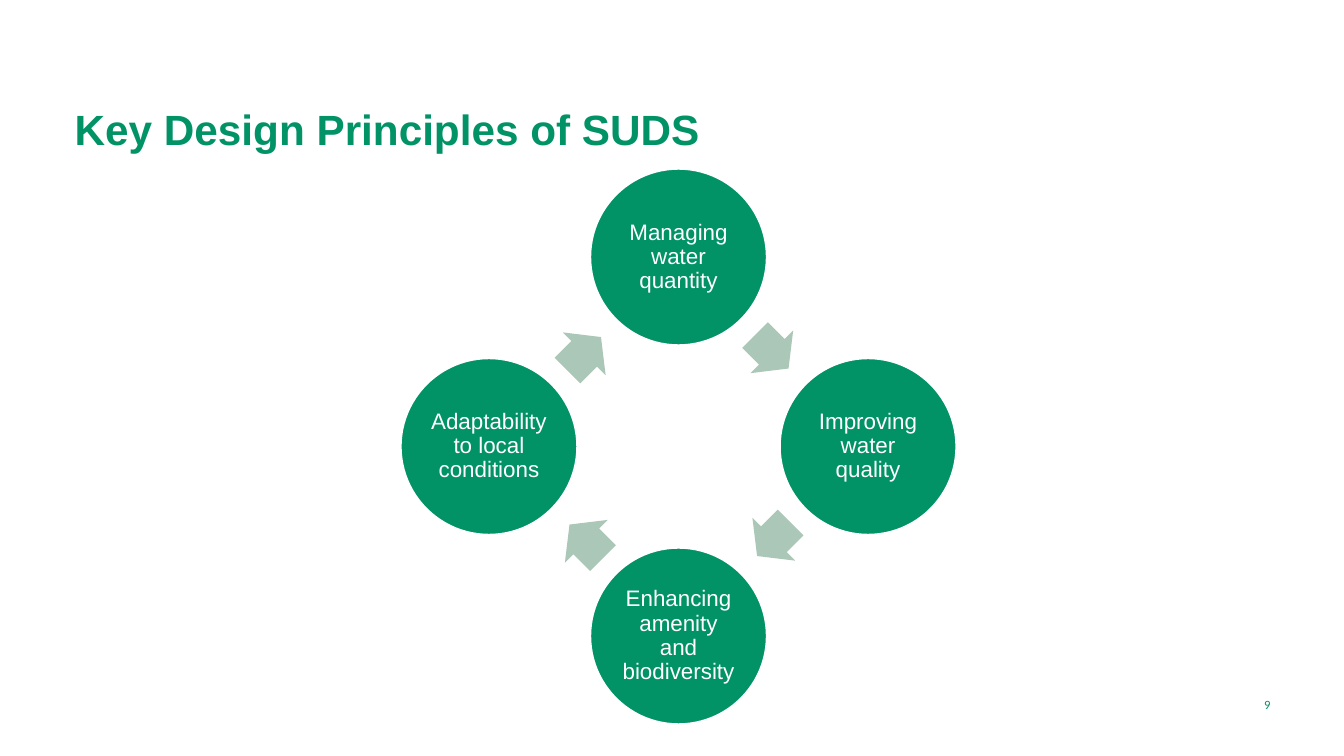
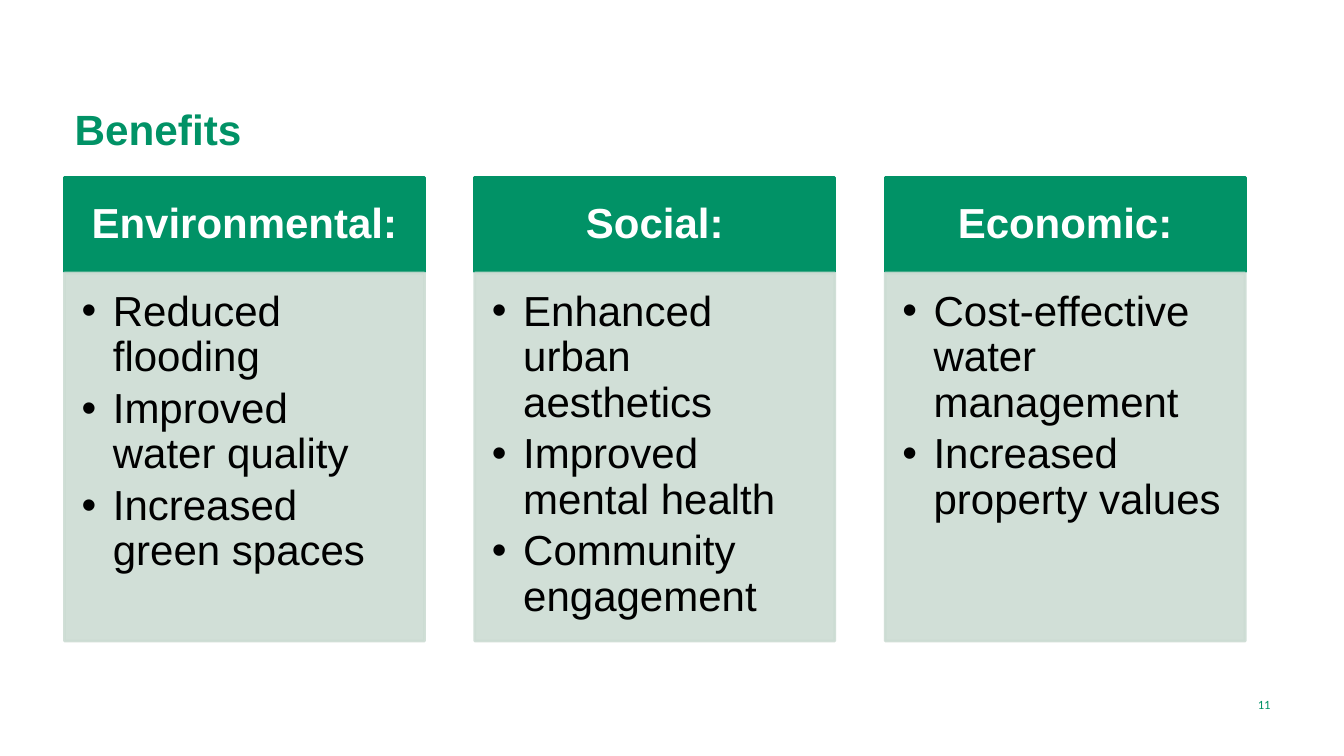
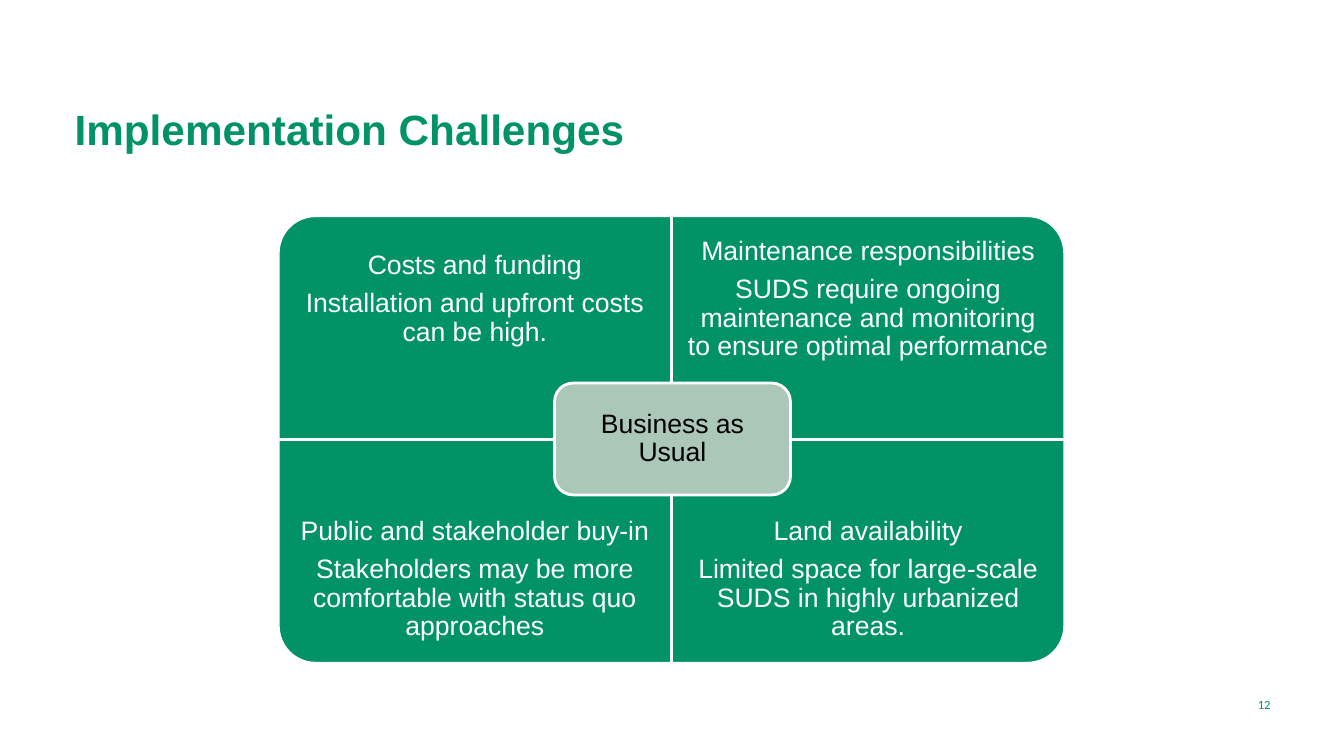
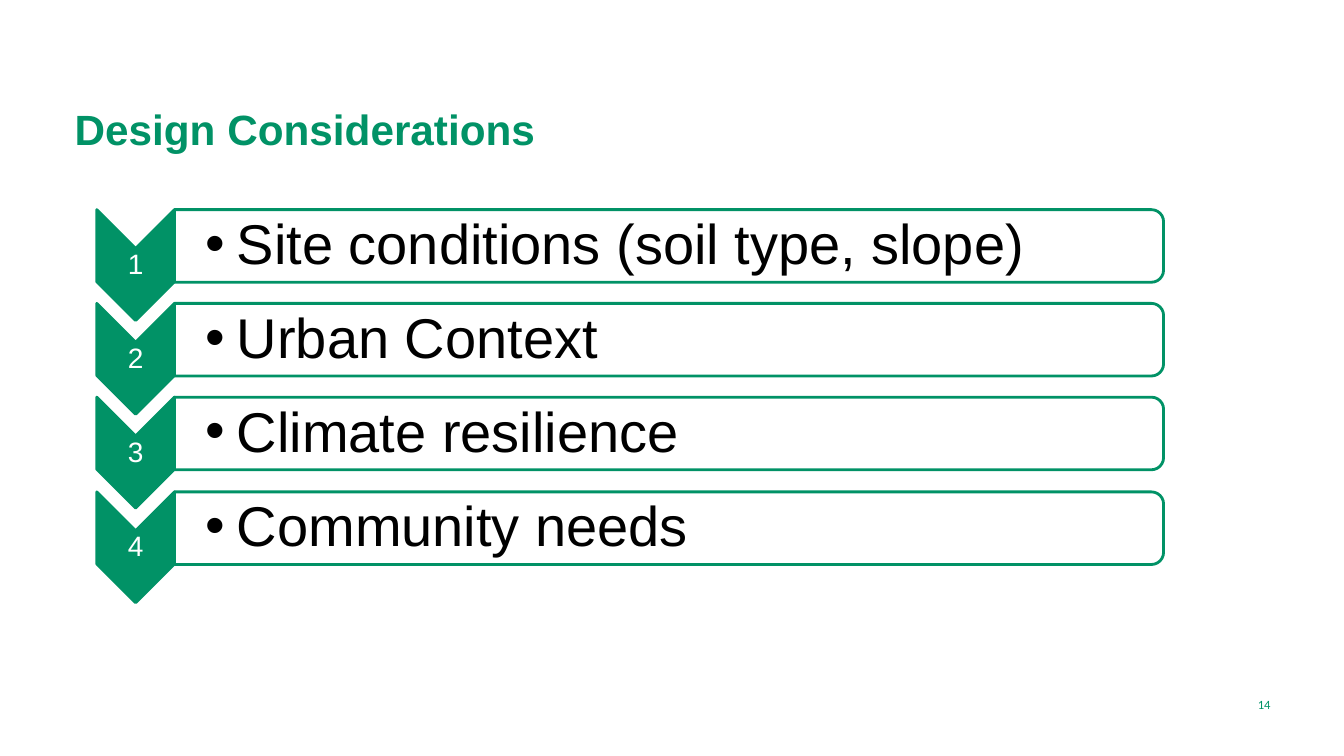
from dataclasses import dataclass
from typing import NamedTuple, Optional

from lxml.etree import SubElement
from pptx import Presentation
from pptx.dml.color import RGBColor
from pptx.enum.shapes import MSO_SHAPE
from pptx.enum.text import MSO_ANCHOR, MSO_AUTO_SIZE, PP_ALIGN
from pptx.oxml.ns import qn
from pptx.util import Emu, Pt

PX = 9144
GREEN = RGBColor(0x01, 0x92, 0x66)
SAGE = RGBColor(0xAB, 0xC7, 0xB8)
MIST = RGBColor(0xCC, 0xDC, 0xD3)
WHITE = RGBColor(0xFF, 0xFF, 0xFF)
BLACK = RGBColor(0x00, 0x00, 0x00)


class Box(NamedTuple):
    x: int
    y: int
    w: int
    h: int

    def emu(self) -> list[Emu]:
        return [px(v) for v in self]


@dataclass(frozen=True)
class TextStyle:
    size: float
    color: RGBColor
    insets: tuple[int, int, int, int]
    bold: bool = False
    font: str = "Arial"
    align: PP_ALIGN = PP_ALIGN.CENTER
    anchor: MSO_ANCHOR = MSO_ANCHOR.MIDDLE
    line_spacing: Optional[float] = 0.9
    after: float = 0.35
    bullet: bool = False


@dataclass(frozen=True)
class Benefit:
    heading: str
    points: list[str]


@dataclass(frozen=True)
class Challenge:
    column: int
    row: int
    rotation: int
    lines: list[str]


TITLE = TextStyle(30.2, GREEN, (10, 5, 10, 5), bold=True, align=PP_ALIGN.LEFT,
                  anchor=MSO_ANCHOR.BOTTOM, line_spacing=None, after=0)
PAGE_NUMBER = TextStyle(9, GREEN, (10, 5, 10, 5), font="Calibri",
                        align=PP_ALIGN.RIGHT, line_spacing=None, after=0)
PRINCIPLE = TextStyle(16, WHITE, (2, 2, 2, 2))
HEADING = TextStyle(30, WHITE, (23, 13, 23, 13), bold=True)
POINTS = TextStyle(30, BLACK, (17, 17, 23, 26), align=PP_ALIGN.LEFT,
                   anchor=MSO_ANCHOR.TOP, after=0.15, bullet=True)
CHALLENGE = TextStyle(19, WHITE, (15, 15, 15, 15))
HUB = TextStyle(19, BLACK, (8, 8, 8, 8))
STEP_NUMBER = TextStyle(20, WHITE, (1, 1, 1, 1))
STEP = TextStyle(40, BLACK, (31, 3, 3, 3), align=PP_ALIGN.LEFT,
                 after=0.15, bullet=True)

PRINCIPLES = ["Managing water quantity", "Improving water quality",
              "Enhancing amenity and biodiversity",
              "Adaptability to local conditions"]
BENEFITS = [
    Benefit("Environmental:", ["Reduced flooding", "Improved water quality",
                               "Increased green spaces"]),
    Benefit("Social:", ["Enhanced urban aesthetics", "Improved mental health",
                        "Community engagement"]),
    Benefit("Economic:", ["Cost-effective water management",
                          "Increased property values"]),
]
CHALLENGES = [
    Challenge(0, 0, 270, ["Costs and funding",
                          "Installation and upfront costs can be high."]),
    Challenge(1, 0, 0, ["Maintenance responsibilities",
                        "SUDS require ongoing maintenance and monitoring "
                        "to ensure optimal performance"]),
    Challenge(0, 1, 180, ["Public and stakeholder buy-in",
                          "Stakeholders may be more comfortable with "
                          "status quo approaches"]),
    Challenge(1, 1, 90, ["Land availability",
                         "Limited space for large-scale SUDS in highly "
                         "urbanized areas."]),
]
CONSIDERATIONS = ["Site conditions (soil type, slope)", "Urban Context",
                  "Climate resilience", "Community needs"]


def px(value: float) -> Emu:
    return Emu(round(value * PX))


def set_all(target, values: dict) -> None:
    for name, value in values.items():
        setattr(target, name, value)


def add_bullet(p) -> None:
    pPr = p._p.get_or_add_pPr()
    pPr.set("marL", str(px(31)))
    pPr.set("indent", str(px(-31)))
    SubElement(pPr, qn("a:buFont")).set("typeface", "Arial")
    SubElement(pPr, qn("a:buChar")).set("char", "•")


def write(sp, lines: list[str], style: TextStyle) -> None:
    tf = sp.text_frame
    left, top, right, bottom = style.insets
    set_all(tf, {"word_wrap": True, "auto_size": MSO_AUTO_SIZE.NONE,
                 "vertical_anchor": style.anchor,
                 "margin_left": px(left), "margin_top": px(top),
                 "margin_right": px(right), "margin_bottom": px(bottom)})
    for i, line in enumerate(lines):
        p = tf.add_paragraph() if i else tf.paragraphs[0]
        if style.bullet:
            add_bullet(p)
        set_all(p, {"alignment": style.align,
                    "line_spacing": style.line_spacing,
                    "space_after": Pt(style.size * style.after)})
        r = p.add_run()
        r.text = line
        set_all(r.font, {"size": Pt(style.size), "bold": style.bold,
                         "name": style.font})
        r.font.color.rgb = style.color


def add_text(s, box: Box, lines: list[str], style: TextStyle) -> None:
    write(s.shapes.add_textbox(*box.emu()), lines, style)


def add_shape(s, kind: MSO_SHAPE, box: Box, fill: RGBColor,
              line: Optional[RGBColor] = None, rotation: int = 0,
              opacity: int = 100):
    x, y, w, h = box
    if rotation in (90, 270):
        x, y, w, h = x + (w - h) / 2, y + (h - w) / 2, h, w
    sp = s.shapes.add_shape(kind, px(x), px(y), px(w), px(h))
    sp.shadow.inherit = False
    sp.rotation = rotation
    sp.fill.solid()
    sp.fill.fore_color.rgb = fill
    if line is None:
        sp.line.fill.background()
    else:
        sp.line.color.rgb = line
        sp.line.width = Pt(2)
    if opacity < 100:
        for color in sp._element.spPr.iter(qn("a:srgbClr")):
            SubElement(color, qn("a:alpha")).set("val", str(opacity * 1000))
    return sp


def add_slide(prs, title: str, number: int, title_width: int = 592):
    s = prs.slides.add_slide(prs.slide_layouts[5])
    sp = s.shapes.title
    box = Box(64, 106, title_width, 52).emu()
    set_all(sp, dict(zip(("left", "top", "width", "height"), box)))
    write(sp, [title], TITLE)
    add_text(s, Box(1155, 679, 115, 40), [str(number)], PAGE_NUMBER)
    return s


def draw_principles(s) -> None:
    cx, cy, size = 673, 443, 176
    arrow_w, arrow_h = 47, 60
    dx, dy = 0, -188
    ax, ay = 92, -94
    for i, name in enumerate(PRINCIPLES):
        circle = Box(cx + dx - size // 2, cy + dy - size // 2, size, size)
        sp = add_shape(s, MSO_SHAPE.OVAL, circle, GREEN, WHITE)
        write(sp, [name], PRINCIPLE)
        arrow = Box(cx + ax - arrow_w // 2, cy + ay - arrow_h // 2,
                    arrow_w, arrow_h)
        sp = add_shape(s, MSO_SHAPE.RIGHT_ARROW, arrow, SAGE,
                       rotation=45 + 90 * i)
        sp.adjustments[0] = 0.6
        dx, dy = -dy, dx
        ax, ay = -ay, ax


def draw_benefits(s) -> None:
    for i, benefit in enumerate(BENEFITS):
        x = 64 + 407 * i
        sp = add_shape(s, MSO_SHAPE.RECTANGLE, Box(x, 176, 357, 94),
                       GREEN, GREEN)
        write(sp, [benefit.heading], HEADING)
        sp = add_shape(s, MSO_SHAPE.RECTANGLE, Box(x, 271, 357, 365),
                       MIST, MIST, opacity=90)
        write(sp, benefit.points, POINTS)


def draw_challenges(s) -> None:
    left, top, w, h, text_h = 276, 214, 390, 222, 166
    for c in CHALLENGES:
        x, y = left + c.column * w, top + c.row * h
        add_shape(s, MSO_SHAPE.ROUND_1_RECTANGLE, Box(x, y, w, h),
                  GREEN, WHITE, c.rotation)
        add_text(s, Box(x, y + c.row * (h - text_h), w, text_h),
                 c.lines, CHALLENGE)
    sp = add_shape(s, MSO_SHAPE.ROUNDED_RECTANGLE, Box(550, 380, 234, 111),
                   SAGE, WHITE)
    write(sp, ["Business as Usual"], HUB)


def draw_considerations(s) -> None:
    for i, name in enumerate(CONSIDERATIONS):
        y = 208 + 280 * i // 3
        add_shape(s, MSO_SHAPE.CHEVRON, Box(96, y, 77, 110),
                  GREEN, GREEN, 90)
        add_text(s, Box(96, y + 39, 77, 33), [str(i + 1)], STEP_NUMBER)
        add_shape(s, MSO_SHAPE.ROUND_2_SAME_RECTANGLE, Box(173, y, 981, 72),
                  WHITE, GREEN, 90)
        add_text(s, Box(173, y + 4, 978, 65), [name], STEP)


def main() -> None:
    prs = Presentation()
    prs.slide_width, prs.slide_height = px(1333), px(750)
    draw_principles(add_slide(prs, "Key Design Principles of SUDS", 9, 749))
    draw_benefits(add_slide(prs, "Benefits", 11))
    draw_challenges(add_slide(prs, "Implementation Challenges", 12))
    draw_considerations(add_slide(prs, "Design Considerations", 14))
    prs.save("out.pptx")


if __name__ == "__main__":
    main()
